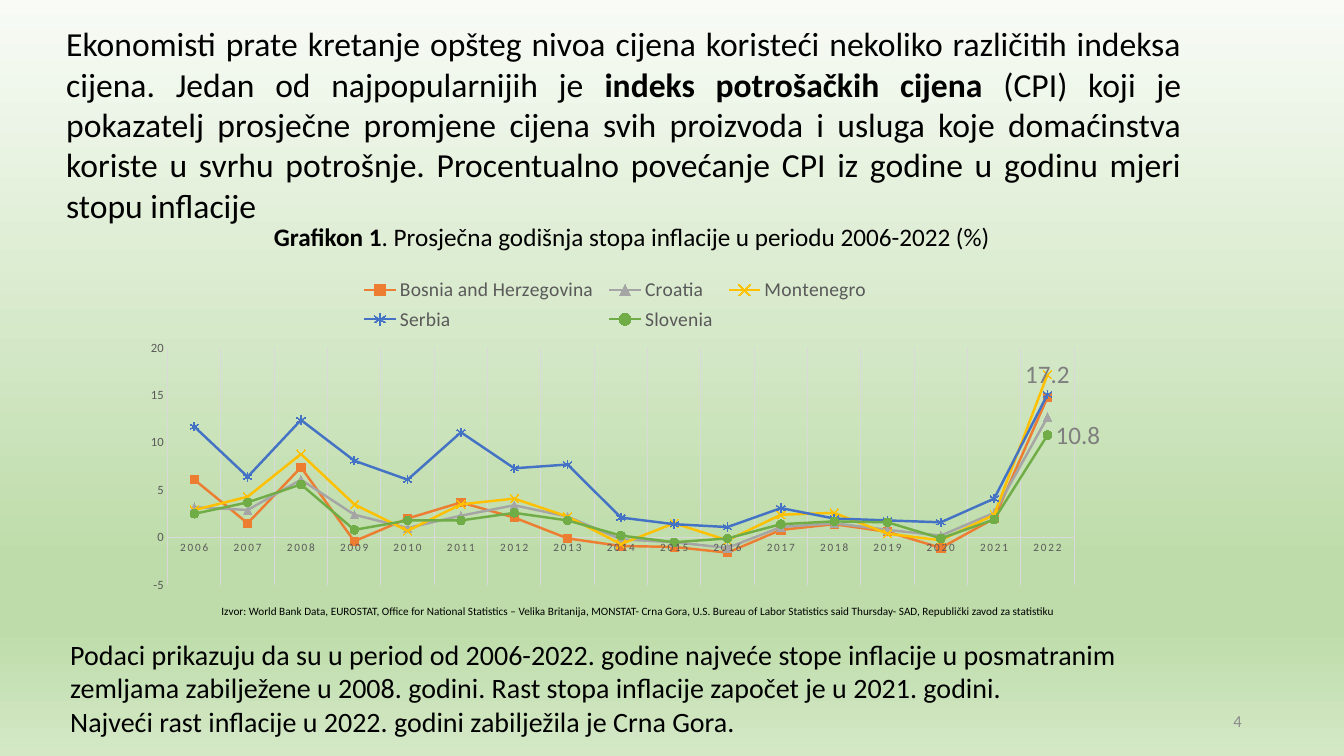
from lxml.etree import SubElement
from pptx import Presentation
from pptx.chart.data import CategoryChartData
from pptx.dml.color import RGBColor
from pptx.enum.chart import (XL_CHART_TYPE, XL_LABEL_POSITION, XL_LEGEND_POSITION,
                             XL_MARKER_STYLE, XL_TICK_MARK)
from pptx.enum.text import MSO_ANCHOR, MSO_AUTO_SIZE, PP_ALIGN
from pptx.oxml import parse_xml
from pptx.oxml.ns import nsdecls, qn
from pptx.util import Cm, Pt

FONT = "Calibri"
BLACK = RGBColor(0x00, 0x00, 0x00)
DARK_GREY = RGBColor(0x59, 0x59, 0x59)
LABEL_GREY = RGBColor(0x7F, 0x7F, 0x7F)
NUMBER_GREY = RGBColor(0x8C, 0x8C, 0x8C)
GRID_GREY = RGBColor(0xD9, 0xD9, 0xD9)
ORANGE = RGBColor(0xED, 0x7D, 0x31)
GREY = RGBColor(0xA5, 0xA5, 0xA5)
GOLD = RGBColor(0xFF, 0xC0, 0x00)
BLUE = RGBColor(0x44, 0x72, 0xC4)
GREEN = RGBColor(0x70, 0xAD, 0x47)
PALE = RGBColor(0xF8, 0xFB, 0xF6)
LEAF = RGBColor(0xBE, 0xDC, 0xAA)
MINT = RGBColor(0xD4, 0xE8, 0xC6)


def write_text(sp, paragraphs, size, color=BLACK, align=PP_ALIGN.LEFT, anchor=MSO_ANCHOR.TOP):
    """Fill a shape with paragraphs, each a list of (text, bold) runs."""
    tf = sp.text_frame
    tf.word_wrap = True
    tf.auto_size = MSO_AUTO_SIZE.NONE
    tf.vertical_anchor = anchor
    for i, runs in enumerate(paragraphs):
        p = tf.paragraphs[0] if i == 0 else tf.add_paragraph()
        p.alignment = align
        for text, bold in runs:
            r = p.add_run()
            r.text = text
            r.font.name, r.font.size, r.font.bold = FONT, Pt(size), bold
            r.font.color.rgb = color


def set_layout(element, x, y, w, h, inner=False):
    """Place a plot area or legend by fractions of the chart."""
    for old in element.findall(qn("c:layout")):
        element.remove(old)
    target = '<c:layoutTarget val="inner"/>' if inner else ""
    layout = parse_xml(
        f'<c:layout {nsdecls("c")}><c:manualLayout>{target}'
        '<c:xMode val="edge"/><c:yMode val="edge"/>'
        f'<c:x val="{x}"/><c:y val="{y}"/><c:w val="{w}"/><c:h val="{h}"/>'
        '</c:manualLayout></c:layout>')
    element.insert(0 if inner else 1, layout)


prs = Presentation()
prs.slide_width, prs.slide_height = Cm(33.87), Cm(19.05)
s = prs.slides.add_slide(prs.slide_layouts[5])

# Background
fill = s.background.fill
fill.gradient()
fill.gradient_angle = 270
stops = s.element.find(".//" + qn("a:gsLst"))
for stop in list(stops):
    stops.remove(stop)
for percent, color in [(0, PALE), (74, LEAF), (83, LEAF), (100, MINT)]:
    stop = SubElement(stops, qn("a:gs"), pos=str(percent * 1000))
    SubElement(stop, qn("a:srgbClr"), val=str(color))

# Chart
data = CategoryChartData(number_format="General")
data.categories = [str(year) for year in range(2006, 2023)]
countries = [
    ("Bosnia and Herzegovina", ORANGE, XL_MARKER_STYLE.SQUARE,
     [6.1, 1.5, 7.4, -0.4, 2, 3.7, 2.1, -0.1, -0.9, -1, -1.6, 0.8, 1.4, 0.6, -1.1, 2, 14.8]),
    ("Croatia", GREY, XL_MARKER_STYLE.TRIANGLE,
     [3.2, 2.9, 6.1, 2.4, 1, 2.3, 3.4, 2.2, -0.2, -0.5, -1.1, 1.1, 1.5, 0.8, 0.2, 2.6, 12.7]),
    ("Montenegro", GOLD, XL_MARKER_STYLE.X,
     [2.9, 4.3, 8.8, 3.5, 0.7, 3.5, 4.1, 2.2, -0.7, 1.5, -0.3, 2.4, 2.6, 0.4, -0.3, 2.4, 17.2]),
    ("Serbia", BLUE, XL_MARKER_STYLE.STAR,
     [11.7, 6.4, 12.4, 8.1, 6.1, 11.1, 7.3, 7.7, 2.1, 1.4, 1.1, 3.1, 2, 1.8, 1.6, 4.1, 15.1]),
    ("Slovenia", GREEN, XL_MARKER_STYLE.CIRCLE,
     [2.5, 3.7, 5.6, 0.8, 1.8, 1.8, 2.6, 1.8, 0.2, -0.5, -0.1, 1.4, 1.7, 1.6, -0.1, 1.9, 10.8]),
]
for name, color, marker, values in countries:
    data.add_series(name, values)
chart = s.shapes.add_chart(XL_CHART_TYPE.LINE_MARKERS, Cm(3.35), Cm(6.71),
                           Cm(24.38), Cm(8.41), data).chart
chart.has_title = False
chart.font.name, chart.font.size = FONT, Pt(10)
chart.font.color.rgb = BLACK
chart.plots[0].vary_by_categories = False

chart.has_legend = True
legend = chart.legend
legend.position = XL_LEGEND_POSITION.TOP
legend.include_in_layout = False
legend.font.name, legend.font.size = FONT, Pt(14)
legend.font.color.rgb = DARK_GREY
set_layout(legend._element, 0.23, 0.02, 0.54, 0.19)
set_layout(chart.plots[0]._element.getparent(), 0.036, 0.245, 0.94, 0.71, inner=True)

label_positions = {"Montenegro": XL_LABEL_POSITION.CENTER, "Slovenia": XL_LABEL_POSITION.RIGHT}
for series, (name, color, marker, values) in zip(chart.plots[0].series, countries):
    series.smooth = False
    series.format.line.color.rgb = color
    series.format.line.width = Pt(1.75)
    series.marker.style, series.marker.size = marker, 6
    series.marker.format.line.color.rgb = color
    if marker in (XL_MARKER_STYLE.X, XL_MARKER_STYLE.STAR):
        series.marker.format.fill.background()
    else:
        series.marker.format.fill.solid()
        series.marker.format.fill.fore_color.rgb = color
    if name in label_positions:
        series.data_labels.show_value = False
        label = series.points[len(values) - 1].data_label
        label.font.name, label.font.size = FONT, Pt(18)
        label.font.color.rgb = LABEL_GREY
        label.position = label_positions[name]

years, rates = chart.category_axis, chart.value_axis
for axis, size in [(years, 8), (rates, 9)]:
    axis.major_tick_mark = axis.minor_tick_mark = XL_TICK_MARK.NONE
    axis.format.line.color.rgb = GRID_GREY
    axis.format.line.width = Pt(0.75)
    font = axis.tick_labels.font
    font.name, font.size = FONT, Pt(size)
    font.color.rgb = DARK_GREY
years._element.find(".//" + qn("a:defRPr")).set("spc", "120")
years.has_major_gridlines = True
years.major_gridlines.format.line.color.rgb = GRID_GREY
years.major_gridlines.format.line.width = Pt(0.75)
rates.has_major_gridlines = False
rates.minimum_scale, rates.maximum_scale, rates.major_unit = -5, 20, 5

# Texts
caption = s.shapes.title
caption.left, caption.top, caption.width, caption.height = Cm(6.65), Cm(5.46), Cm(24.51), Cm(1.02)
write_text(caption, [[("Grafikon 1", True),
                      (". Prosječna godišnja stopa inflacije u periodu 2006-2022 (%)", False)]], 18)

intro = s.shapes.add_textbox(Cm(1.42), Cm(0.46), Cm(28.6), Cm(5.38))
write_text(intro, [[
    ("Ekonomisti prate kretanje opšteg nivoa cijena koristeći nekoliko različitih indeksa "
     "cijena. Jedan od najpopularnijih je ", False),
    ("indeks potrošačkih cijena", True),
    (" (CPI) koji je pokazatelj prosječne promjene cijena svih proizvoda i usluga koje "
     "domaćinstva koriste u svrhu potrošnje. Procentualno povećanje CPI iz godine u godinu "
     "mjeri stopu inflacije", False)]], 24, align=PP_ALIGN.JUSTIFY)

sources = s.shapes.add_textbox(Cm(5.33), Cm(15.11), Cm(22.02), Cm(0.61))
write_text(sources, [[
    ("Izvor: World Bank Data, EUROSTAT, Office for National Statistics – Velika Britanija, "
     "MONSTAT- Crna Gora, U.S. Bureau of Labor Statistics said Thursday- SAD, "
     "Republički zavod za statistiku", False)]], 8)

findings = s.shapes.add_textbox(Cm(1.52), Cm(15.93), Cm(29.64), Cm(2.82))
write_text(findings, [
    [("Podaci prikazuju da su u period od 2006-2022. godine najveće stope inflacije u "
      "posmatranim zemljama zabilježene u 2008. godini. Rast stopa inflacije započet je u "
      "2021. godini.", False)],
    [("Najveći rast inflacije u 2022. godini zabilježila je Crna Gora.", False)]], 20)

page_number = s.shapes.add_textbox(Cm(23.93), Cm(17.65), Cm(7.62), Cm(1.02))
write_text(page_number, [[("4", False)]], 12, color=NUMBER_GREY,
           align=PP_ALIGN.RIGHT, anchor=MSO_ANCHOR.MIDDLE)

prs.save("out.pptx")
